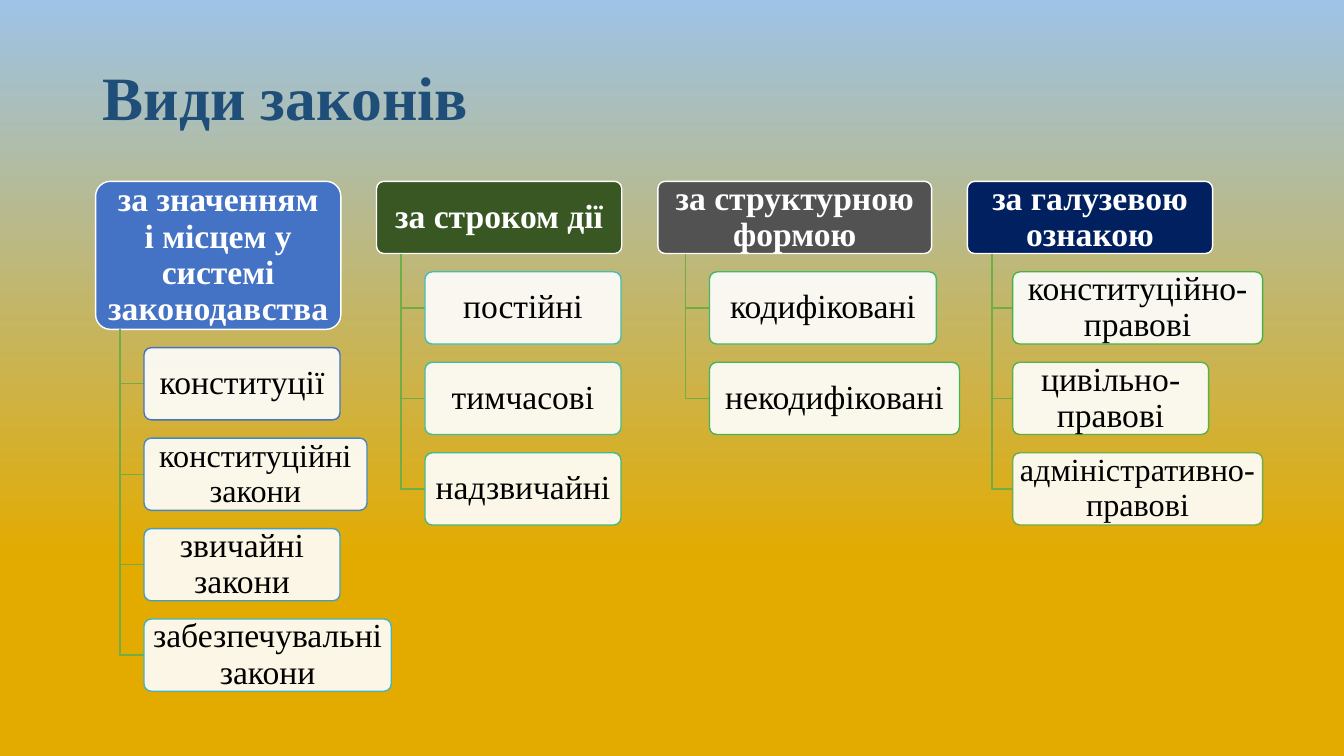
from lxml import etree
from pptx import Presentation
from pptx.dml.color import RGBColor
from pptx.enum.shapes import MSO_SHAPE
from pptx.enum.text import MSO_ANCHOR, PP_ALIGN
from pptx.oxml.ns import qn
from pptx.util import Cm, Pt

ROUNDED = MSO_SHAPE.ROUNDED_RECTANGLE
MIDDLE = MSO_ANCHOR.MIDDLE
LEFT, CENTER = PP_ALIGN.LEFT, PP_ALIGN.CENTER

COLORS = {
    "gold": "E3AB00", "sky": "9DC3E6", "title": "1F4E79",
    "white": "FFFFFF", "black": "000000", "branch": "70AD47",
    "blue": "4472C4", "green": "385723", "gray": "525252", "navy": "002060",
}
FONT = "Times New Roman"
TOP, ROW, GAP = 4.57, 1.82, 0.46
NARROW, WIDE = 4.94, 6.3

GROUPS = [
    dict(title="за значенням\vі місцем у системі законодавства", color="blue",
         left=2.41, width=6.18, height=3.73, indent=1.22, laws=[
             ("конституції", NARROW, 24, "4472C4"),
             ("конституційні закони", 5.62, 23, "4489C2"),
             ("звичайні закони", NARROW, 24, "449FC1"),
             ("забезпечувальні закони", 6.23, 24, "43B5BF")]),
    dict(title="за строком дії", color="green",
         left=9.49, width=6.18, height=ROW, indent=1.22, laws=[
             ("постійні", NARROW, 24, "43BEB1"),
             ("тимчасові", NARROW, 24, "43BC99"),
             ("надзвичайні", NARROW, 24, "44B982")]),
    dict(title="за структурною формою", color="gray",
         left=16.58, width=6.9, height=ROW, indent=1.3, laws=[
             ("кодифіковані", 5.72, 24, "44B76B"),
             ("некодифіковані", WIDE, 24, "45B456")]),
    dict(title="за галузевою ознакою", color="navy",
         left=24.38, width=6.18, height=ROW, indent=1.14, laws=[
             ("конституційно-правові", WIDE, 24, "49B246"),
             ("цивільно-правові", NARROW, 24, "5DAF46"),
             ("адміністративно-правові", WIDE, 23, "70AD47")]),
]


def rgb(color):
    return RGBColor.from_string(COLORS.get(color, color))


def write(frame, text, size=24, color="black", bold=False, align=CENTER):
    frame.word_wrap = True
    frame.vertical_anchor = MIDDLE
    paragraph = frame.paragraphs[0]
    paragraph.text = text
    paragraph.alignment = align
    paragraph.line_spacing = 0.9
    for run in paragraph.runs:
        run.font.name = FONT
        run.font.size = Pt(size)
        run.font.bold = bold
        run.font.color.rgb = rgb(color)


class LawChart:
    def __init__(self, slide):
        self.slide = slide

    def background(self, lower, upper):
        fill = self.slide.background.fill
        fill.gradient()
        fill.gradient_angle = 90
        for stop, color, position in zip(fill.gradient_stops, (lower, upper), (0.26, 1)):
            stop.color.rgb = rgb(color)
            stop.position = position

    def title(self, text):
        heading = self.slide.shapes.title
        heading.left, heading.top = Cm(2.33), Cm(1.14)
        heading.width, heading.height = Cm(29.21), Cm(2.77)
        write(heading.text_frame, text, size=44, color="title", bold=True, align=LEFT)

    def card(self, text, left, top, width, height, fill, line, opacity=100, **text_format):
        card = self.slide.shapes.add_shape(ROUNDED, Cm(left), Cm(top), Cm(width), Cm(height))
        card.adjustments[0] = 0.1
        card.shadow.inherit = False
        card.fill.solid()
        card.fill.fore_color.rgb = rgb(fill)
        if opacity < 100:
            tint = card.fill._xPr.find(qn("a:solidFill"))[0]
            etree.SubElement(tint, qn("a:alpha")).set("val", str(opacity * 1000))
        card.line.color.rgb = rgb(line)
        card.line.width = Pt(1)
        frame = card.text_frame
        frame.margin_left = frame.margin_right = Cm(0.12)
        frame.margin_top = frame.margin_bottom = Cm(0.08)
        write(frame, text, **text_format)

    def branch(self, trunk, top, left, middle):
        builder = self.slide.shapes.build_freeform(Cm(trunk), Cm(top))
        builder.add_line_segments(
            [(Cm(trunk), Cm(middle)), (Cm(left), Cm(middle))], close=False)
        branch = builder.convert_to_shape()
        branch.shadow.inherit = False
        branch.fill.background()
        branch.line.color.rgb = rgb("branch")
        branch.line.width = Pt(1)

    def group(self, title, color, left, width, height, indent, laws):
        self.card(title, left, TOP, width, height, color, "white", color="white", bold=True)
        bottom = TOP + height
        for row, (law, law_width, size, outline) in enumerate(laws):
            law_top = bottom + GAP + row * (ROW + GAP)
            self.branch(left + width / 10, bottom, left + indent, law_top + ROW / 2)
            self.card(law, left + indent, law_top, law_width, ROW, "white", outline,
                      opacity=90, size=size)


def main():
    presentation = Presentation()
    presentation.slide_width, presentation.slide_height = Cm(33.87), Cm(19.05)
    chart = LawChart(presentation.slides.add_slide(presentation.slide_layouts[5]))
    chart.background("gold", "sky")
    chart.title("Види законів")
    for group in GROUPS:
        chart.group(**group)
    presentation.save("out.pptx")


if __name__ == "__main__":
    main()
